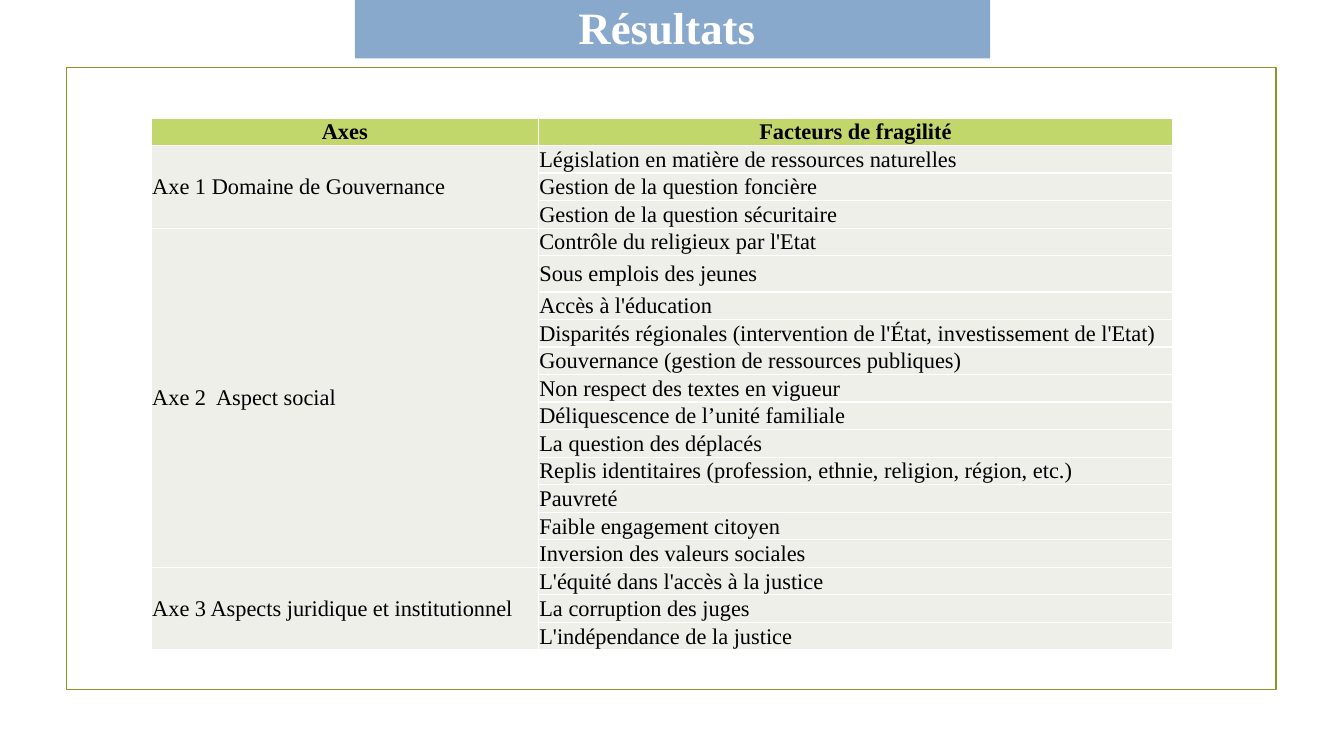
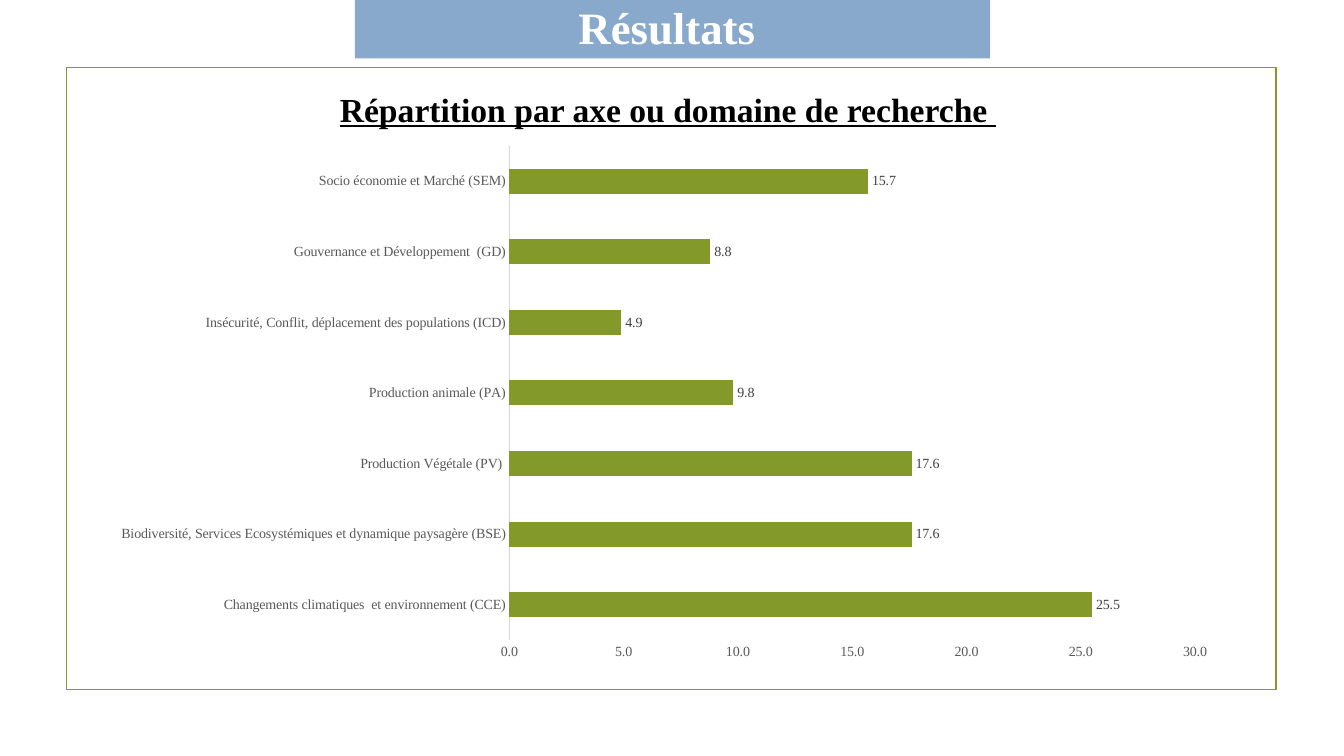
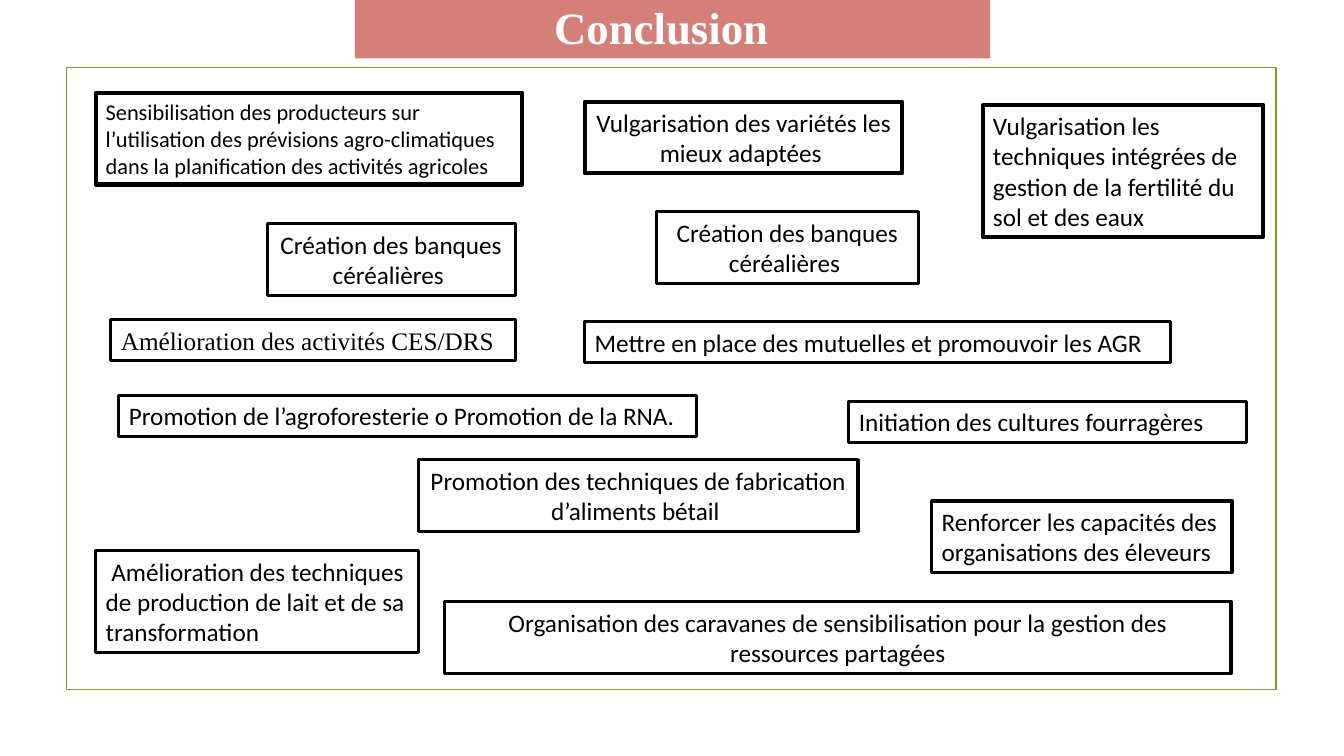
from lxml import etree
from pptx import Presentation
from pptx.chart.data import CategoryChartData
from pptx.dml.color import RGBColor
from pptx.enum.chart import XL_CHART_TYPE, XL_LABEL_POSITION, XL_TICK_MARK
from pptx.enum.shapes import MSO_SHAPE
from pptx.enum.text import MSO_ANCHOR, MSO_AUTO_SIZE, PP_ALIGN
from pptx.oxml import parse_xml
from pptx.oxml.ns import nsdecls, qn
from pptx.util import Inches, Pt

LEFT, CENTER = PP_ALIGN.LEFT, PP_ALIGN.CENTER
MIDDLE = MSO_ANCHOR.MIDDLE
RECT = MSO_SHAPE.RECTANGLE
NO_TICK = XL_TICK_MARK.NONE

SERIF, SANS = "Times New Roman", "Calibri"
BLUE, RED, GREEN = "88A9CB", "D47F77", "83992A"
LIME, PALE = "C1D66B", "EDEFE8"
BLACK, WHITE = "000000", "FFFFFF"
AXIS_TEXT, AXIS_LINE, LABEL_TEXT = "595959", "D9D9D9", "404040"

TITLE_BAND = (3.52, -0.06, 6.3, 0.64)
FRAME = (0.66, 0.67, 12, 6.17)

HEADINGS = ("Axes", "Facteurs de fragilité")
AXES = {
    "Axe 1 Domaine de Gouvernance": [
        "Législation en matière de ressources naturelles",
        "Gestion de la question foncière",
        "Gestion de la question sécuritaire",
    ],
    "Axe 2  Aspect social": [
        "Contrôle du religieux par l'Etat",
        "Sous emplois des jeunes",
        "Accès à l'éducation",
        "Disparités régionales (intervention de l'État, investissement de l'Etat)",
        "Gouvernance (gestion de ressources publiques)",
        "Non respect des textes en vigueur",
        "Déliquescence de l’unité familiale",
        "La question des déplacés",
        "Replis identitaires (profession, ethnie, religion, région, etc.)",
        "Pauvreté",
        "Faible engagement citoyen",
        "Inversion des valeurs sociales",
    ],
    "Axe 3 Aspects juridique et institutionnel": [
        "L'équité dans l'accès à la justice",
        "La corruption des juges",
        "L'indépendance de la justice",
    ],
}
TABLE_AT = (1.5, 1.17, 10.13, 5.28)
COLUMNS = (3.84, 6.29)
TALL_ROW, TALL_HEIGHT = 5, 0.36

SHARES = [
    ("Changements climatiques  et environnement (CCE)", 25.5),
    ("Biodiversité, Services Ecosystémiques et dynamique paysagère (BSE)", 17.6),
    ("Production Végétale (PV) ", 17.6),
    ("Production animale (PA)", 9.8),
    ("Insécurité, Conflit, déplacement des populations (ICD)", 4.9),
    ("Gouvernance et Développement  (GD)", 8.8),
    ("Socio économie et Marché (SEM)", 15.7),
]
PLOT_AREA = {"x": 0.363, "y": 0.02, "w": 0.606, "h": 0.92}

# left, top, width, number of lines, alignment, text, then what differs
ACTIONS = [
    (0.95, 0.92, 4.23, 3, LEFT, "Sensibilisation des producteurs sur l’utilisation des prévisions "
     "agro-climatiques dans la planification des activités agricoles ", {"size": 16, "line": 3}),
    (5.8, 1.01, 3.15, 2, CENTER, "Vulgarisation des variétés les mieux adaptées ", {"line": 3}),
    (2.65, 2.22, 2.46, 2, CENTER, "Création des banques céréalières ", {}),
    (9.75, 1.04, 2.78, 4, LEFT, "Vulgarisation les techniques intégrées de gestion de la "
     "fertilité du sol et des eaux ", {"line": 3}),
    (6.51, 2.1, 2.6, 2, CENTER, "Création des banques céréalières ", {}),
    (5.8, 3.19, 5.81, 1, LEFT, "Mettre en place des mutuelles et promouvoir les AGR ", {}),
    (1.18, 3.92, 5.73, 1, LEFT, "Promotion de l’agroforesterie o Promotion de la RNA.", {}),
    (8.42, 3.98, 3.94, 1, LEFT, "Initiation des cultures fourragères ", {}),
    (4.15, 4.56, 4.36, 2, CENTER, "Promotion des techniques de fabrication d’aliments bétail ", {}),
    (0.95, 5.46, 3.2, 3, LEFT, " Amélioration des techniques de production de lait et de sa "
     "transformation ", {}),
    (9.24, 4.97, 2.98, 2, LEFT, "Renforcer les capacités des organisations des éleveurs", {}),
    (4.41, 5.97, 7.8, 2, CENTER, "Organisation des caravanes de sensibilisation pour la gestion "
     "des ressources partagées", {}),
    (1.1, 3.17, 4.01, 1, LEFT, "Amélioration des activités CES/DRS", {"face": SERIF}),
]


def color(hex_code):
    return RGBColor.from_string(hex_code)


def inches(lengths):
    return [Inches(length) for length in lengths]


def set_font(font, size, ink, face=SERIF, bold=False):
    font.name, font.size, font.bold = face, Pt(size), bold
    font.color.rgb = color(ink)


def write(text_frame, text, size, ink, face=SERIF, bold=False, align=LEFT):
    text_frame.word_wrap = True
    paragraph = text_frame.paragraphs[0]
    paragraph.alignment = align
    run = paragraph.add_run()
    run.text = text
    set_font(run.font, size, ink, face, bold)
    return run


def add_outline(slide, at, ink, width):
    """Add an unfilled rectangle with a plain outline."""
    box = slide.shapes.add_shape(RECT, *inches(at))
    box.shadow.inherit = False
    box.fill.background()
    box.line.color.rgb = color(ink)
    box.line.width = Pt(width)
    return box


def prepare_layout(prs):
    """Place the title band and the green frame once, on the layout."""
    layout = prs.slide_layouts.get_by_name("Title Only")
    band = layout.placeholders[0]
    band.left, band.top, band.width, band.height = inches(TITLE_BAND)
    return layout


def move_frame_to_layout(slide, layout):
    frame = add_outline(slide, FRAME, GREEN, 1.25).element
    frame.nvSpPr.cNvPr.set("id", "20")
    layout.shapes.element.append(frame)


def add_slide(prs, layout, title, band_color):
    slide = prs.slides.add_slide(layout)
    band = slide.shapes.title
    band.fill.solid()
    band.fill.fore_color.rgb = color(band_color)
    band.text_frame.auto_size = MSO_AUTO_SIZE.NONE
    write(band.text_frame, title, 32, WHITE, bold=True, align=CENTER)
    return slide


def style_cell(cell, text, fill, **text_style):
    cell.margin_left = cell.margin_right = cell.margin_top = Inches(0.01)
    cell.margin_bottom = 0
    cell.vertical_anchor = MIDDLE
    properties = cell._tc.get_or_add_tcPr()
    for side in "LRTB":
        border = etree.SubElement(properties, qn(f"a:ln{side}"), w=str(Pt(1)))
        solid = etree.SubElement(border, qn("a:solidFill"))
        etree.SubElement(solid, qn("a:srgbClr"), val=WHITE)
    cell.fill.solid()
    cell.fill.fore_color.rgb = color(fill)
    if text:
        write(cell.text_frame, text, 16, BLACK, **text_style)


def add_factor_table(slide):
    row_count = 1 + sum(len(factors) for factors in AXES.values())
    table = slide.shapes.add_table(row_count, 2, *inches(TABLE_AT)).table
    for column, width in zip(table.columns, COLUMNS):
        column.width = Inches(width)
    row_height = (TABLE_AT[3] - TALL_HEIGHT) / (row_count - 1)
    for index, row in enumerate(table.rows):
        row.height = Inches(TALL_HEIGHT if index == TALL_ROW else row_height)

    for column, heading in enumerate(HEADINGS):
        style_cell(table.cell(0, column), heading, LIME, bold=True, align=CENTER)
    first = 1
    for axis, factors in AXES.items():
        for offset, factor in enumerate(factors):
            style_cell(table.cell(first + offset, 0), "" if offset else axis, PALE)
            style_cell(table.cell(first + offset, 1), factor, PALE)
        last = first + len(factors) - 1
        table.cell(first, 0).merge(table.cell(last, 0))
        first = last + 1


def add_share_chart(slide):
    data = CategoryChartData(number_format="0.0")
    data.categories = [name for name, _ in SHARES]
    data.add_series("Series 1", [share for _, share in SHARES])
    chart = slide.shapes.add_chart(
        XL_CHART_TYPE.BAR_CLUSTERED, *inches((0.98, 1.34, 11.22, 5.33)), data).chart
    chart.has_title = chart.has_legend = False
    set_font(chart.font, 10, BLACK)

    for axis in (chart.category_axis, chart.value_axis):
        axis.major_tick_mark = axis.minor_tick_mark = NO_TICK
        axis.has_major_gridlines = False
        set_font(axis.tick_labels.font, 10, AXIS_TEXT)
    chart.category_axis.format.line.color.rgb = color(AXIS_LINE)
    chart.category_axis.format.line.width = Pt(0.75)
    scale = chart.value_axis
    scale.format.line.fill.background()
    scale.minimum_scale, scale.maximum_scale, scale.major_unit = 0, 30, 5
    scale.tick_labels.number_format = "0.0"
    scale.tick_labels.number_format_is_linked = False

    plot = chart.plots[0]
    plot.gap_width = 182
    plot.vary_by_categories = False
    bars = plot.series[0].format.fill
    bars.solid()
    bars.fore_color.rgb = color(GREEN)
    plot.has_data_labels = True
    labels = plot.data_labels
    labels.show_value = True
    labels.number_format, labels.number_format_is_linked = "0.0", False
    labels.position = XL_LABEL_POSITION.OUTSIDE_END
    set_font(labels.font, 10, LABEL_TEXT)
    fix_plot_area(chart)


def fix_plot_area(chart):
    """Set the inner plot area as shares of the chart's size."""
    plot_area = chart._chartSpace.chart.plotArea
    for automatic in plot_area.findall(qn("c:layout")):
        plot_area.remove(automatic)
    modes = '<c:xMode val="edge"/><c:yMode val="edge"/>'
    sizes = "".join(f'<c:{key} val="{share}"/>' for key, share in PLOT_AREA.items())
    plot_area.insert(0, parse_xml(
        f'<c:layout {nsdecls("c")}><c:manualLayout><c:layoutTarget val="inner"/>'
        f"{modes}{sizes}</c:manualLayout></c:layout>"))


def add_action(slide, left, top, width, lines, align, text, style):
    size = style.get("size", 18)
    height = lines * size / 60 + 0.11
    box = add_outline(slide, (left, top, width, height), BLACK, style.get("line", 2.25))
    write(box.text_frame, text, size, BLACK, style.get("face", SANS), align=align)


def main():
    prs = Presentation()
    prs.slide_width, prs.slide_height = inches((13.33, 7.5))
    layout = prepare_layout(prs)

    factors = add_slide(prs, layout, "Résultats ", BLUE)
    move_frame_to_layout(factors, layout)
    add_factor_table(factors)

    shares = add_slide(prs, layout, "Résultats ", BLUE)
    add_share_chart(shares)
    heading = shares.shapes.add_textbox(*inches((2.19, 0.83, 8.87, 0.5)))
    run = write(heading.text_frame, "Répartition par axe ou domaine de recherche ", 24, BLACK,
                bold=True, align=CENTER)
    run.font.underline = True

    conclusion = add_slide(prs, layout, "Conclusion  ", RED)
    for action in ACTIONS:
        add_action(conclusion, *action)

    prs.save("out.pptx")


if __name__ == "__main__":
    main()
